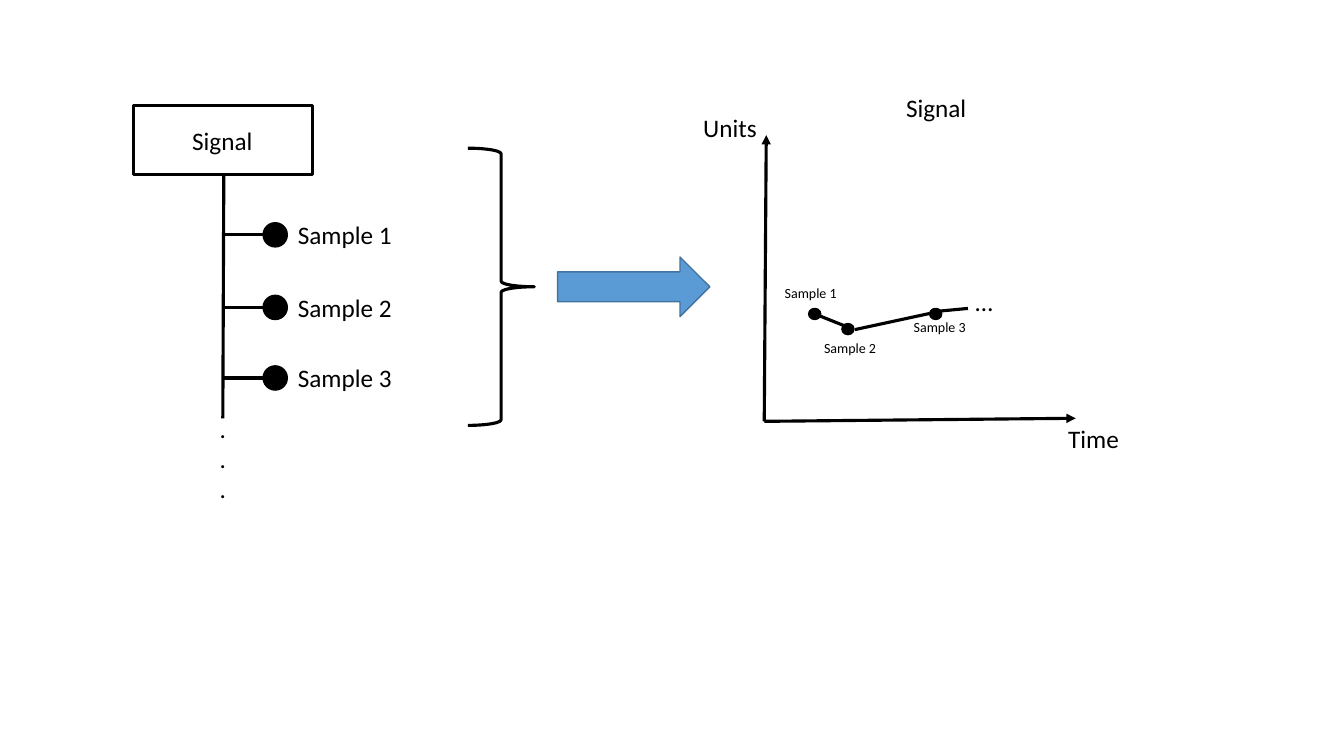
from lxml.etree import SubElement
from pptx import Presentation
from pptx.dml.color import RGBColor
from pptx.enum.shapes import MSO_CONNECTOR, MSO_SHAPE
from pptx.enum.text import MSO_ANCHOR, MSO_AUTO_SIZE, PP_ALIGN
from pptx.oxml.ns import qn
from pptx.util import Inches, Pt

BLACK = "000000"
BLUE = "5B9BD5"
DARK_BLUE = "43739E"
HEAVY = 2.25


def color(hex_string):
    return RGBColor.from_string(hex_string)


def add_figure(slide, kind, left, top, width, height, fill=None, line=BLACK, weight=1):
    shape = slide.shapes.add_shape(
        kind, Inches(left), Inches(top), Inches(width), Inches(height))
    shape.shadow.inherit = False
    if fill:
        shape.fill.solid()
        shape.fill.fore_color.rgb = color(fill)
    else:
        shape.fill.background()
    shape.line.color.rgb = color(line)
    shape.line.width = Pt(weight)
    return shape


def add_line(slide, start, end, arrow_at_start=False):
    line = slide.shapes.add_connector(
        MSO_CONNECTOR.STRAIGHT, *(Inches(value) for value in (*start, *end)))
    line.line.color.rgb = color(BLACK)
    line.line.width = Pt(HEAVY)
    if arrow_at_start:
        SubElement(line.line._get_or_add_ln(), qn("a:headEnd"), type="triangle")
    SubElement(line._element.spPr, qn("a:effectLst"))
    return line


def add_label(slide, text, left, top, width, height=0.4, size=18, wrap=False):
    box = slide.shapes.add_textbox(
        Inches(left), Inches(top), Inches(width), Inches(height))
    frame = box.text_frame
    frame.word_wrap = wrap
    frame.auto_size = MSO_AUTO_SIZE.SHAPE_TO_FIT_TEXT
    frame.vertical_anchor = MSO_ANCHOR.TOP
    frame.text = text
    for para in frame.paragraphs:
        para.alignment = PP_ALIGN.CENTER
        for span in para.runs:
            span.font.name = "Calibri"
            span.font.size = Pt(size)
            span.font.color.rgb = color(BLACK)
    return box


def draw_signal_tree(slide, left, top):
    # Root box and trunk
    add_figure(slide, MSO_SHAPE.RECTANGLE, left, top, 1.78, 0.68, weight=HEAVY)
    add_label(slide, "Signal", left + 0.48, top + 0.14, 0.81)
    add_line(slide, (left + 0.9, top + 0.69), (left + 0.89, top + 3.1))

    # Sample branches
    dot = 0.24
    for number, branch in enumerate((1.28, 2.0, 2.7), start=1):
        middle = top + branch
        add_line(slide, (left + 0.89, middle), (left + 1.3, middle))
        add_figure(slide, MSO_SHAPE.OVAL, left + 1.29, middle - dot / 2, dot, dot, BLACK)
        add_label(slide, f"Sample {number}", left + 1.53, middle - 0.2, 1.14)

    # Continuation dots
    add_label(slide, ".\n.\n.", left + 0.74, top + 3, 0.3, 1.01, wrap=True)


def draw_transition(slide, left, top):
    add_figure(slide, MSO_SHAPE.RIGHT_BRACE, left, top, 0.66, 2.75, weight=HEAVY)
    add_figure(slide, MSO_SHAPE.RIGHT_ARROW, left + 0.89, top + 1.08, 1.51, 0.59,
               BLUE, DARK_BLUE)


def draw_signal_plot(slide, left, top):
    # Axes, meeting at the origin
    origin = (left + 0.71, top + 3.31)
    for tip in ((left + 0.73, top + 0.47), (left + 3.8, top + 3.28)):
        add_line(slide, tip, origin, arrow_at_start=True)

    # Title and axis names
    for text, x, y, width in (("Signal", 2.01, 0, 0.81),
                              ("Units", 0, 0.2, 0.74),
                              ("Time", 3.62, 3.28, 0.71)):
        add_label(slide, text, left + x, top + y, width)

    # Sample points with the corner of each label
    points = (((1.15, 2.19), (0.81, 1.9)),
              ((1.48, 2.34), (1.2, 2.45)),
              ((2.35, 2.19), (2.09, 2.24)))
    for number, ((x, y), (label_x, label_y)) in enumerate(points, start=1):
        add_figure(slide, MSO_SHAPE.OVAL, left + x, top + y, 0.12, 0.11, BLACK)
        add_label(slide, f"Sample {number}", left + label_x, top + label_y, 0.72, 0.27, 10)

    # Curve segments
    for x1, y1, x2, y2 in ((1.2, 2.24, 1.5, 2.36),
                           (1.61, 2.4, 2.35, 2.24),
                           (2.41, 2.22, 2.73, 2.19)):
        add_line(slide, (left + x1, top + y1), (left + x2, top + y2))
    add_label(slide, "…", left + 2.7, top + 1.92, 0.38)


def main():
    deck = Presentation()
    deck.slide_width = Inches(13.33)
    deck.slide_height = Inches(7.5)
    slide = deck.slides.add_slide(deck.slide_layouts[6])
    draw_signal_tree(slide, 1.32, 1.05)
    draw_transition(slide, 4.64, 1.47)
    draw_signal_plot(slide, 6.87, 0.87)
    deck.save("out.pptx")


if __name__ == "__main__":
    main()
